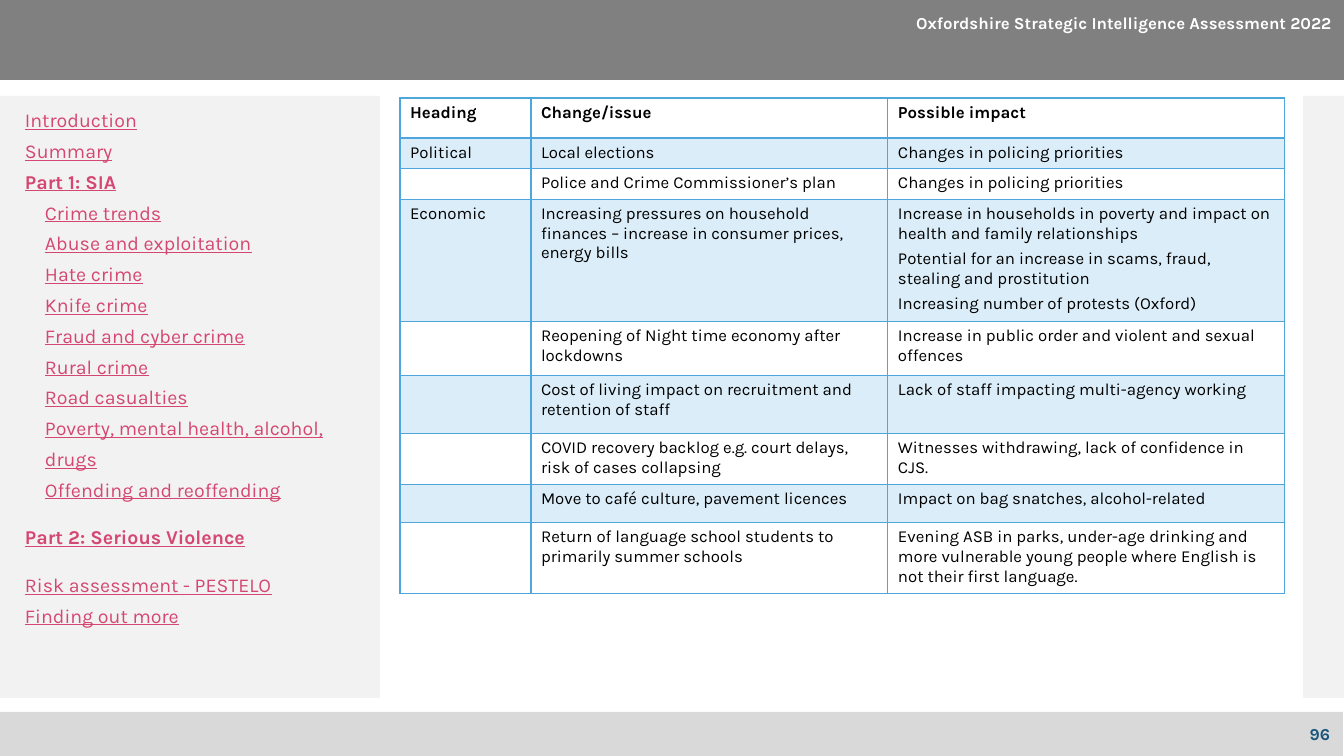
from lxml import etree
from pptx import Presentation
from pptx.dml.color import RGBColor
from pptx.enum.shapes import MSO_SHAPE
from pptx.enum.text import MSO_ANCHOR, PP_ALIGN
from pptx.oxml.ns import qn
from pptx.util import Emu, Pt

RECT = MSO_SHAPE.RECTANGLE
MIDDLE, TOP = MSO_ANCHOR.MIDDLE, MSO_ANCHOR.TOP
RIGHT = PP_ALIGN.RIGHT

FONT = "Karla"
BLACK, WHITE, NAVY, PINK, BLUE = "000000", "FFFFFF", "19567C", "D54773", "4EA6DC"

# left, top, width, height in px, fill
PANELS = [
    (-1, 712, 1344, 44, "D9D9D9"),
    (0, 0, 1344, 80, "808080"),
    (0, 96, 380, 602, "F2F2F2"),
    (1303, 96, 41, 602, "F2F2F2"),
]

# left, top, width, height in px, text, colour
LABELS = [
    (1172, 714, 168, 40, "96", NAVY),
    (825, 3, 517, 40, "Oxfordshire Strategic Intelligence Assessment 2022", WHITE),
]

MENU_BOX = (15, 96, 355, 599)
# text, level, bold, space before in points
MENU = [
    ("Introduction", 0, False, 0),
    ("Summary", 0, False, 0),
    ("Part 1: SIA", 0, True, 0),
    ("Crime trends", 1, False, 0),
    ("Abuse and exploitation", 1, False, 0),
    ("Hate crime", 1, False, 0),
    ("Knife crime", 1, False, 0),
    ("Fraud and cyber crime", 1, False, 0),
    ("Rural crime", 1, False, 0),
    ("Road casualties", 1, False, 0),
    ("Poverty, mental health, alcohol, drugs", 1, False, 0),
    ("Offending and reoffending", 1, False, 0),
    ("Part 2: Serious Violence", 0, True, 12),
    ("Risk assessment - PESTELO", 0, False, 12),
    ("Finding out more", 0, False, 0),
]
MENU_INDENT = 20

TABLE_LEFT, TABLE_TOP = 400, 98
COLUMN_WIDTHS = [131, 357, 397]
# row height in px, then one text per column; a line end starts a new paragraph
ROWS = [
    (40, "Heading", "Change/issue", "Possible impact"),
    (30, "Political", "Local elections", "Changes in policing priorities"),
    (31, "", "Police and Crime Commissioner’s plan", "Changes in policing priorities"),
    (122, "Economic",
     "Increasing pressures on household finances – increase in consumer prices, energy bills",
     "Increase in households in poverty and impact on health and family relationships\n"
     "Potential for an increase in scams, fraud, stealing and prostitution\n"
     "Increasing number of protests (Oxford)"),
    (54, "", "Reopening of Night time economy after lockdowns",
     "Increase in public order and violent and sexual offences"),
    (58, "", "Cost of living impact on recruitment and retention of staff",
     "Lack of staff impacting multi-agency working"),
    (51, "", "COVID recovery backlog e.g. court delays, risk of cases collapsing",
     "Witnesses withdrawing, lack of confidence in CJS."),
    (38, "", "Move to café culture, pavement licences",
     "Impact on bag snatches, alcohol-related"),
    (71, "", "Return of language school students to primarily summer schools",
     "Evening ASB in parks, under-age drinking and more vulnerable young people "
     "where English is not their first language."),
]


def px(n):
    return Emu(round(n * 914400 / 100.8))


def rgb(value):
    return RGBColor.from_string(value)


def set_font(p, size, color, bold=False):
    p.font.name = FONT
    p.font.size = Pt(size)
    p.font.bold = bold
    p.font.color.rgb = rgb(color)


def add_text_box(slide, box, anchor):
    tf = slide.shapes.add_textbox(*map(px, box)).text_frame
    tf.word_wrap = True
    tf.vertical_anchor = anchor
    return tf


def add_border(cell, side, width):
    tc_pr = cell._tc.get_or_add_tcPr()
    ln = etree.SubElement(tc_pr, qn(f"a:ln{side}"), w=str(Pt(width)))
    fill = etree.SubElement(ln, qn("a:solidFill"))
    etree.SubElement(fill, qn("a:srgbClr"), val=BLUE)


def fill_cell(cell, tinted):
    """Give the cell a 20% blue tint, or no fill."""
    if not tinted:
        cell.fill.background()
        return
    cell.fill.solid()
    cell.fill.fore_color.rgb = rgb(BLUE)
    color = cell._tc.tcPr.find(f"{qn('a:solidFill')}/{qn('a:srgbClr')}")
    etree.SubElement(color, qn("a:alpha"), val="20000")


def add_panels(slide):
    for *box, color in PANELS:
        sp = slide.shapes.add_shape(RECT, *map(px, box))
        sp.shadow.inherit = False
        sp.fill.solid()
        sp.fill.fore_color.rgb = rgb(color)
        sp.line.fill.background()


def add_labels(slide):
    for *box, text, color in LABELS:
        p = add_text_box(slide, box, MIDDLE).paragraphs[0]
        p.text = text
        p.alignment = RIGHT
        set_font(p, 12, color, bold=True)


def add_menu(slide):
    tf = add_text_box(slide, MENU_BOX, TOP)
    for i, (text, level, bold, before) in enumerate(MENU):
        p = tf.add_paragraph() if i else tf.paragraphs[0]
        p.text = text
        p.level = level
        p.line_spacing = Pt(22)
        p.space_before = Pt(before)
        p._p.get_or_add_pPr().set("marL", str(px(MENU_INDENT * level)))
        set_font(p, 14, PINK, bold)
        p.font.underline = True


def add_issue_table(slide):
    heights = [row[0] for row in ROWS]
    frame = slide.shapes.add_table(
        len(ROWS), len(COLUMN_WIDTHS), px(TABLE_LEFT), px(TABLE_TOP),
        px(sum(COLUMN_WIDTHS)), px(sum(heights)))
    table = frame.table
    table.first_row = table.horz_banding = False
    for column, width in zip(table.columns, COLUMN_WIDTHS):
        column.width = px(width)
    for i, (height, *texts) in enumerate(ROWS):
        table.rows[i].height = px(height)
        for j, text in enumerate(texts):
            cell = table.cell(i, j)
            cell.text = text
            for p in cell.text_frame.paragraphs:
                p.space_before = p.space_after = Pt(2)
                set_font(p, 12, BLACK, bold=i == 0)
            for side in "LRTB":
                header_rule = (i, side) in ((0, "B"), (1, "T"))
                add_border(cell, side, 2 if header_rule else 1)
            fill_cell(cell, tinted=i % 2 == 1)


def main():
    prs = Presentation()
    prs.slide_width, prs.slide_height = px(1344), px(756)
    slide = prs.slides.add_slide(prs.slide_layouts[6])
    add_panels(slide)
    add_labels(slide)
    add_issue_table(slide)
    add_menu(slide)
    prs.save("out.pptx")


if __name__ == "__main__":
    main()
